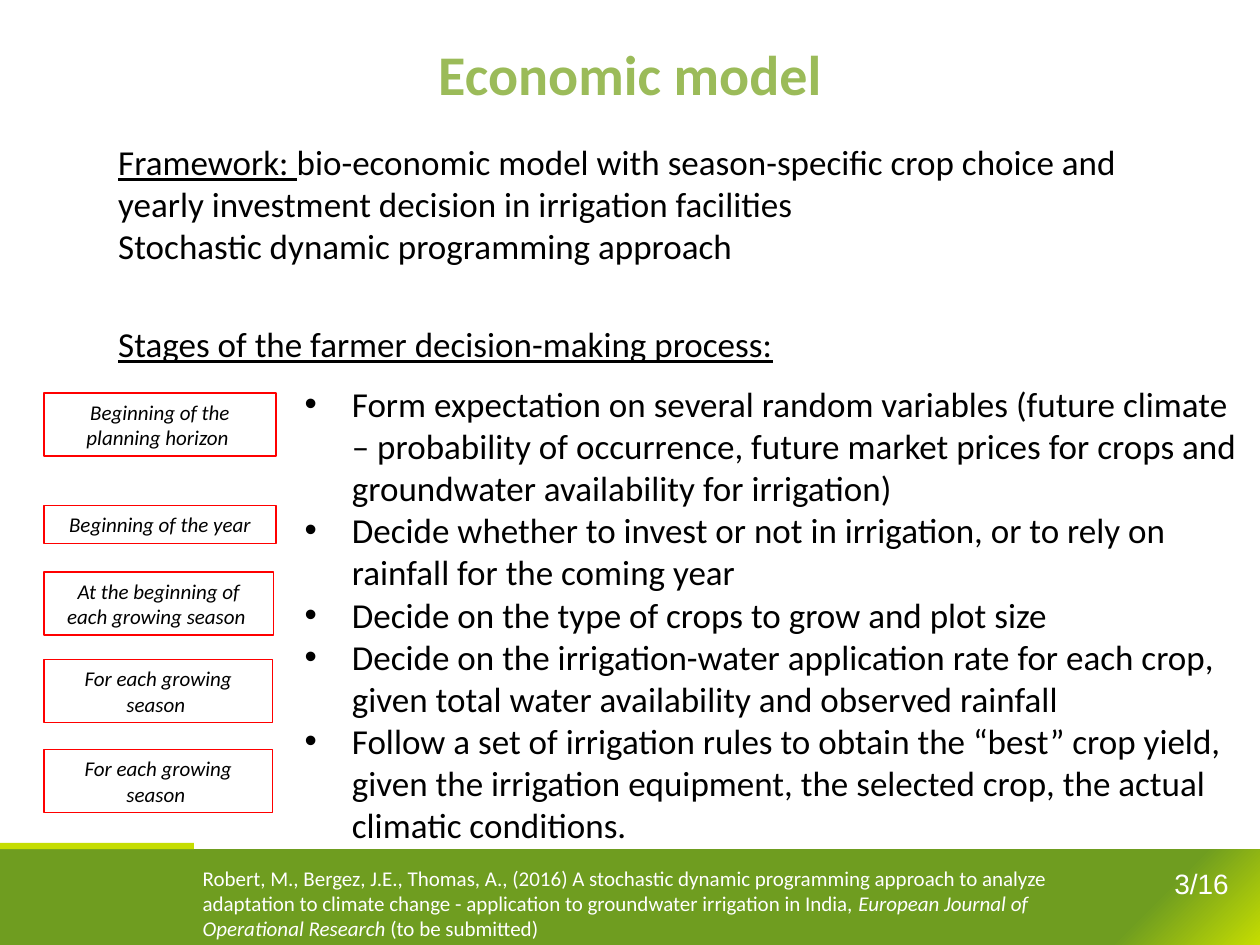
import pptx
import pptx.util
import pptx.dml.color
import pptx.enum.shapes
import pptx.enum.text
import pptx.oxml
import pptx.oxml.ns
import lxml.etree

Pt = pptx.util.Pt
ALIGN = pptx.enum.text.PP_ALIGN
RECT = pptx.enum.shapes.MSO_SHAPE.RECTANGLE

COLORS = {
    "title": "9BBB59", "text": "000000", "frame": "FF0000",
    "white": "FFFFFF", "lime": "C5DD01", "green": "6F9D20",
}
TITLE = "Economic model"
INTRO = [
    [("Framework: ", "u"),
     ("bio-economic model with season-specific crop choice and "
      "yearly investment decision in irrigation facilities", "")],
    [("Stochastic dynamic programming approach", "")],
    [("Stages of the farmer decision-making process:", "u")],
]
STAGES = [
    ("Beginning of the planning horizon ", 224.6, 132.5, 36),
    ("Beginning of the year", 288.7, 132.5, 21.8),
    ("At the beginning of each growing season ", 326.9, 131, 36),
    ("For each growing season ", 377, 130.5, 36),
    ("For each growing season ", 428.4, 130.5, 36),
]
STEPS = [
    "Form expectation on several random variables (future climate – probability "
    "of occurrence, future market prices for crops and groundwater availability "
    "for irrigation)",
    "Decide whether to invest or not in irrigation, or to rely on rainfall for "
    "the coming year",
    "Decide on the type of crops to grow and plot size",
    "Decide on the irrigation-water application rate for each crop, given total "
    "water availability and observed rainfall",
    "Follow a set of irrigation rules to obtain the “best” crop yield, given the "
    "irrigation equipment, the selected crop, the actual climatic conditions.",
]
SOURCE = [[
    ("Robert, M., Bergez, J.E., Thomas, A., (2016) A stochastic dynamic "
     "programming approach to analyze adaptation to climate change - application "
     "to groundwater irrigation in India, ", ""),
    ("European Journal of Operational Research", "i"),
    (" (to be submitted)", ""),
]]
PAGE = "3/16"
GLOW = [(0, "lime"), (11, "green"), (100, "green")]


def rgb(name):
    """Return the named colour."""
    return pptx.dml.color.RGBColor.from_string(COLORS[name])


def style(par, size, color="text", face="Calibri", align=ALIGN.LEFT):
    """Set the font and alignment of a paragraph."""
    par.alignment = align
    par.font.size = Pt(size)
    par.font.name = face
    par.font.color.rgb = rgb(color)


def write(shape, paras, size, **look):
    """Fill a shape with paragraphs of marked runs."""
    frame = shape.text_frame
    frame.word_wrap = True
    frame.vertical_anchor = pptx.enum.text.MSO_ANCHOR.TOP
    for i, runs in enumerate(paras):
        par = frame.paragraphs[0] if i == 0 else frame.add_paragraph()
        style(par, size, **look)
        for text, mark in runs:
            run = par.add_run()
            run.text = text
            if mark == "u":
                run.font.underline = True
            if mark == "i":
                run.font.italic = True
    return frame.paragraphs


def label(slide, place, paras, size, **look):
    """Add a text box and return its paragraphs."""
    box = slide.shapes.add_textbox(*map(Pt, place))
    return write(box, paras, size, **look)


def block(slide, place, fill=None, line=None):
    """Add a plain rectangle."""
    shape = slide.shapes.add_shape(RECT, *map(Pt, place))
    shape.shadow.inherit = False
    if fill:
        shape.fill.solid()
        shape.fill.fore_color.rgb = rgb(fill)
    else:
        shape.fill.background()
    if line:
        shape.line.color.rgb = rgb(line)
        shape.line.width = Pt(0.75)
    else:
        shape.line.fill.background()
    return shape


def glow(shape):
    """Give a shape a radial gradient from its lower right corner."""
    stops = "".join(
        f'<a:gs pos="{pos * 1000}"><a:srgbClr val="{COLORS[name]}"/></a:gs>'
        for pos, name in GLOW)
    grad = pptx.oxml.parse_xml(
        f'<a:gradFill {pptx.oxml.ns.nsdecls("a")}><a:gsLst>{stops}</a:gsLst>'
        '<a:path path="circle"><a:fillToRect l="100000" t="100000"/></a:path>'
        '</a:gradFill>')
    props = shape._element.spPr
    props.replace(props.find(pptx.oxml.ns.qn("a:noFill")), grad)


def bullet(par):
    """Add a hanging bullet to a paragraph."""
    props = par._p.get_or_add_pPr()
    props.set("marL", str(Pt(27)))
    props.set("indent", str(-Pt(27)))
    for tag, key, value in (("buFont", "typeface", "Arial"), ("buChar", "char", "•")):
        mark = lxml.etree.Element(pptx.oxml.ns.qn("a:" + tag))
        mark.set(key, value)
        props.insert_element_before(mark, "a:tabLst", "a:defRPr", "a:extLst")


def main():
    """Build the slide and save it."""
    deck = pptx.Presentation()
    deck.slide_width, deck.slide_height = Pt(720), Pt(540)
    slide = deck.slides.add_slide(deck.slide_layouts[5])

    glow(block(slide, (0, 485.3, 720, 54.7)))
    block(slide, (0, 481.7, 110.9, 3.6), fill="lime")
    label(slide, (620.6, 491.8, 88.6, 19.4), [[(PAGE, "")]], 16,
          color="white", face="Arial", align=ALIGN.RIGHT)

    title = slide.shapes.title
    title.left, title.top, title.width, title.height = map(Pt, (0, 0, 720, 59.8))
    head = write(title, [[(TITLE, "")]], 32, color="title", align=ALIGN.CENTER)[0]
    head.line_spacing = 1.5
    head.font.bold = True
    title.text_frame.auto_size = pptx.enum.text.MSO_AUTO_SIZE.NONE

    intro = label(slide, (60.5, 77, 626.4, 130), INTRO, 20)
    intro[-1].space_before = Pt(32)

    for text, top, width, height in STAGES:
        tag = block(slide, (25.2, top, width, height), line="frame")
        par = write(tag, [[(text, "")]], 12, align=ALIGN.CENTER)[0]
        par.font.italic = True

    for par in label(slide, (167, 215.3, 550.8, 273.6),
                     [[(step, "")] for step in STEPS], 20):
        bullet(par)

    label(slide, (108.7, 491, 535, 51), SOURCE, 12, color="white")
    deck.save("out.pptx")


if __name__ == "__main__":
    main()
